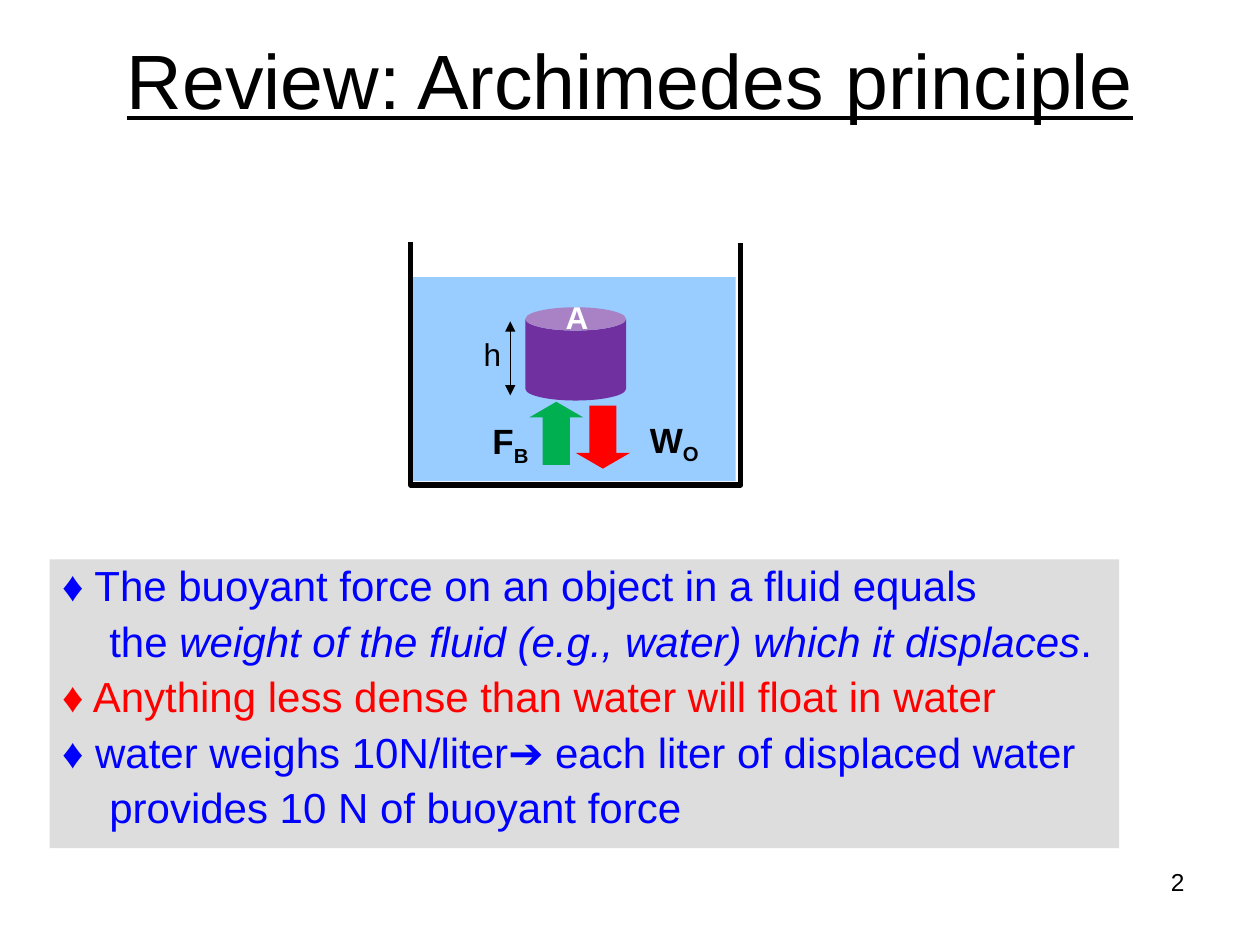
from lxml import etree
from pptx import Presentation
from pptx.dml.color import RGBColor
from pptx.enum.shapes import MSO_CONNECTOR, MSO_SHAPE
from pptx.enum.text import MSO_ANCHOR, MSO_AUTO_SIZE, PP_ALIGN
from pptx.oxml.ns import qn
from pptx.util import Pt

BLACK = RGBColor(0x00, 0x00, 0x00)
WHITE = RGBColor(0xFF, 0xFF, 0xFF)
GREY = RGBColor(0xDD, 0xDD, 0xDD)
BLUE = RGBColor(0x00, 0x00, 0xFF)
RED = RGBColor(0xFF, 0x00, 0x00)
GREEN = RGBColor(0x00, 0xB0, 0x50)
PURPLE = RGBColor(0x70, 0x30, 0xA0)
WATER = RGBColor(0x99, 0xCC, 0xFF)

CENTER, RIGHT = PP_ALIGN.CENTER, PP_ALIGN.RIGHT
MIDDLE = MSO_ANCHOR.MIDDLE
NO_AUTOFIT = MSO_AUTO_SIZE.NONE
RECTANGLE, UP_ARROW, CAN = MSO_SHAPE.RECTANGLE, MSO_SHAPE.UP_ARROW, MSO_SHAPE.CAN
STRAIGHT = MSO_CONNECTOR.STRAIGHT

# Each line: text pieces with their italic flag, colour, and whether it continues
STATEMENTS = [
    ([("♦ The buoyant force on an object in a fluid equals", False)], BLUE, False),
    ([("the ", False),
      ("weight of the fluid (e.g., water) which it displaces", True),
      (".", False)], BLUE, True),
    ([("♦ Anything less dense than water will float in water", False)], RED, False),
    ([("♦ water weighs 10N/liter➔ each liter of displaced water", False)], BLUE, False),
    ([("provides 10 N of buoyant force", False)], BLUE, True),
]


def points(*values):
    return [Pt(value) for value in values]


def add_run(paragraph, text, size, color=BLACK, **formats):
    run = paragraph.add_run()
    run.text = text
    for name, value in {"name": "Arial", "size": Pt(size), **formats}.items():
        setattr(run.font, name, value)
    run.font.color.rgb = color
    return run


def add_filled(shapes, kind, box, color):
    shape = shapes.add_shape(kind, *points(*box))
    shape.shadow.inherit = False
    shape.fill.solid()
    shape.fill.fore_color.rgb = color
    shape.line.fill.background()
    return shape


def add_label(shapes, box, text, size, color=BLACK, bold=False, subscript="", wrap=False):
    label = shapes.add_textbox(*points(*box))
    label.text_frame.word_wrap = wrap
    paragraph = label.text_frame.paragraphs[0]
    add_run(paragraph, text, size, color, bold=bold)
    if subscript:
        run = add_run(paragraph, subscript, size, color, bold=bold)
        run.font._element.set("baseline", "-25000")
    return paragraph


def place_title(slide, box):
    title = slide.shapes.title
    title.left, title.top, title.width, title.height = points(*box)
    frame = title.text_frame
    frame.auto_size = NO_AUTOFIT
    frame.vertical_anchor = MIDDLE
    frame.paragraphs[0].alignment = CENTER
    add_run(frame.paragraphs[0], "Review: Archimedes principle", 44, underline=True)


def add_height_marker(shapes, x, top, bottom):
    marker = shapes.add_connector(STRAIGHT, *points(x, top, x, bottom))
    marker.line.color.rgb = BLACK
    marker.line.width = Pt(0.75)
    line = marker.line._get_or_add_ln()
    for end in ("a:headEnd", "a:tailEnd"):
        etree.SubElement(line, qn(end), type="triangle")
    etree.SubElement(marker._element.spPr, qn("a:effectLst"))


def place_tank(slide, box):
    left, top, width, height = box
    shapes = slide.shapes.add_group_shape().shapes

    def inside(x, y, w, h):
        return left + x, top + y, w, h

    # Open-topped tank and its water
    builder = shapes.build_freeform(Pt(left), Pt(top))
    corners = [(0, height), (width, height), (width, 0.7)]
    builder.add_line_segments([points(left + x, top + y) for x, y in corners], close=False)
    walls = builder.convert_to_shape()
    walls.shadow.inherit = False
    walls.fill.background()
    walls.line.color.rgb = BLACK
    walls.line.width = Pt(3)
    add_filled(shapes, RECTANGLE, inside(1.4, 20.2, 184.3, 116.6), WATER)

    # Buoyant force and weight
    for x, y, color, rotation in [(67.7, 91.4, GREEN, 0), (94.3, 93.6, RED, 180)]:
        arrow = add_filled(shapes, UP_ARROW, inside(x, y, 31, 36), color)
        arrow.adjustments[1] = 0.29
        arrow.rotation = rotation
    add_label(shapes, inside(129.6, 97.2, 43.2, 31), "W", 20, bold=True, subscript="O")
    add_label(shapes, inside(39.6, 97.9, 36, 31), "F", 20, bold=True, subscript="B")

    # Submerged cylinder with its area and height
    add_filled(shapes, CAN, inside(65.5, 37.4, 57.6, 53.3), PURPLE)
    add_label(shapes, inside(81.4, 28.8, 22.3, 28.8), "A", 18, WHITE, bold=True, wrap=True)
    add_height_marker(shapes, left + 56.9, top + 45.4, top + 87.8)
    add_label(shapes, inside(34.6, 49.7, 24.5, 28.8), "h", 18)


def place_statements(slide, box):
    panel = slide.shapes.add_textbox(*points(*box))
    panel.fill.solid()
    panel.fill.fore_color.rgb = GREY
    frame = panel.text_frame
    frame.word_wrap = True
    for index, (pieces, color, continues) in enumerate(STATEMENTS):
        paragraph = frame.add_paragraph() if index else frame.paragraphs[0]
        paragraph.line_spacing = 0.9
        paragraph.space_before = Pt(5.8)
        if continues:
            paragraph._p.get_or_add_pPr().set("marL", str(Pt(27)))
        for text, italic in pieces:
            add_run(paragraph, text, 24, color, italic=italic)


def place_page_number(slide, box):
    add_label(slide.shapes, box, "2", 14, wrap=True).alignment = RIGHT


def main():
    presentation = Presentation()
    presentation.slide_width, presentation.slide_height = points(720, 540)
    slide = presentation.slides.add_slide(presentation.slide_layouts[5])
    place_title(slide, (0, 0, 720, 90))
    place_statements(slide, (28.4, 319.6, 611.2, 165))
    place_tank(slide, (234.7, 138.2, 188.6, 139))
    place_page_number(slide, (516.2, 491.8, 167.8, 37.4))
    presentation.save("out.pptx")


if __name__ == "__main__":
    main()
